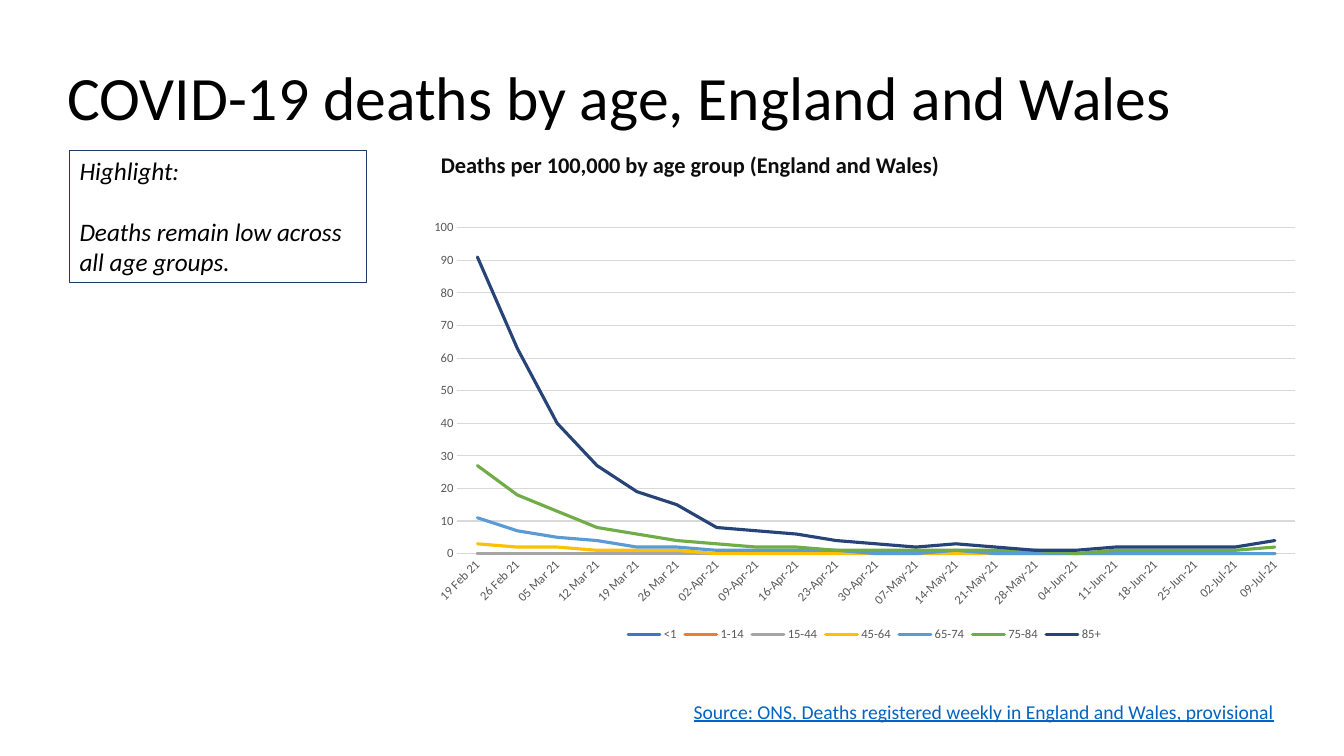
"""Builds a slide on COVID-19 deaths by age group in England and Wales."""
from pptx import Presentation
from pptx.chart.data import CategoryChartData
from pptx.dml.color import RGBColor
from pptx.enum import chart as ch, shapes, text
from pptx.util import Inches, Pt

FONT = "Calibri"
BLACK = RGBColor(0x00, 0x00, 0x00)
NEAR_BLACK = RGBColor(0x0D, 0x0D, 0x0D)
GREY = RGBColor(0x59, 0x59, 0x59)
RULE = RGBColor(0xD9, 0xD9, 0xD9)
NAVY = RGBColor(0x20, 0x38, 0x64)
LINK_BLUE = RGBColor(0x05, 0x63, 0xC1)

WEEKS = [
    "19 Feb 21", "26 Feb 21", "05 Mar 21", "12 Mar 21", "19 Mar 21", "26 Mar 21",
    "02-Apr-21", "09-Apr-21", "16-Apr-21", "23-Apr-21", "30-Apr-21",
    "07-May-21", "14-May-21", "21-May-21", "28-May-21",
    "04-Jun-21", "11-Jun-21", "18-Jun-21", "25-Jun-21", "02-Jul-21", "09-Jul-21",
]
NO_DEATHS = [0] * len(WEEKS)
AGE_GROUPS = [
    ("<1", RGBColor(0x44, 0x72, 0xC4), NO_DEATHS),
    ("1-14", RGBColor(0xED, 0x7D, 0x31), NO_DEATHS),
    ("15-44", RGBColor(0xA5, 0xA5, 0xA5), NO_DEATHS),
    ("45-64", RGBColor(0xFF, 0xC0, 0x00), [3, 2, 2, 1, 1, 1] + [0] * 15),
    ("65-74", RGBColor(0x5B, 0x9B, 0xD5),
     [11, 7, 5, 4, 2, 2, 1, 1, 1, 1, 0, 0, 1] + [0] * 8),
    ("75-84", RGBColor(0x70, 0xAD, 0x47),
     [27, 18, 13, 8, 6, 4, 3, 2, 2, 1, 1, 1, 1, 1, 1, 0, 1, 1, 1, 1, 2]),
    ("85+", RGBColor(0x26, 0x44, 0x78),
     [91, 63, 40, 27, 19, 15, 8, 7, 6, 4, 3, 2, 3, 2, 1, 1, 2, 2, 2, 2, 4]),
]


def set_font(font, size, color):
    """Give a font its face, size and colour."""
    font.name, font.size = FONT, Pt(size)
    font.color.rgb = color


def add_label(s, box, words, size, color, wrap=False):
    """Place a one-paragraph text box and return its paragraph."""
    tf = s.shapes.add_textbox(*map(Inches, box)).text_frame
    tf.word_wrap = wrap
    p = tf.paragraphs[0]
    p.text = words
    set_font(p.font, size, color)
    return p


def add_title(s, box):
    """Place the slide title, centred vertically in its box."""
    p = add_label(s, box, "COVID-19 deaths by age, England and Wales", 44, BLACK, True)
    p.line_spacing = 0.9
    s.shapes[-1].text_frame.vertical_anchor = text.MSO_ANCHOR.MIDDLE


def add_highlight(s, box):
    """Place the outlined highlight note."""
    sp = s.shapes.add_shape(shapes.MSO_SHAPE.RECTANGLE, *map(Inches, box))
    sp.shadow.inherit = False
    sp.fill.background()
    sp.line.color.rgb, sp.line.width = NAVY, Pt(0.75)
    tf = sp.text_frame
    tf.word_wrap = True
    tf.vertical_anchor = text.MSO_ANCHOR.TOP
    tf.text = "Highlight:\nDeaths remain low across all age groups."
    for p in tf.paragraphs:
        p.alignment = text.PP_ALIGN.LEFT
        set_font(p.font, 18, BLACK)
        p.font.italic = True
    tf.paragraphs[1].space_before = Pt(22)


def style_axes(chart):
    """Format both axes and the horizontal gridlines."""
    weeks, rate = chart.category_axis, chart.value_axis
    for axis in (weeks, rate):
        axis.major_tick_mark = axis.minor_tick_mark = ch.XL_TICK_MARK.NONE
        set_font(axis.tick_labels.font, 9, GREY)
    weeks.has_major_gridlines = False
    weeks.tick_labels.font._element.getparent().getparent().getparent().bodyPr.set("rot", "-2700000")
    rate.minimum_scale, rate.maximum_scale, rate.major_unit = 0, 100, 10
    rate.tick_labels.number_format = "0"
    rate.tick_labels.number_format_is_linked = False
    rate.format.line.fill.background()
    for line in (weeks.format.line, rate.major_gridlines.format.line):
        line.color.rgb, line.width = RULE, Pt(0.75)


def add_deaths_chart(s, box):
    """Place the weekly line chart of deaths by age group."""
    data = CategoryChartData()
    data.categories = WEEKS
    for name, _, rates in AGE_GROUPS:
        data.add_series(name, rates)
    chart = s.shapes.add_chart(ch.XL_CHART_TYPE.LINE, *map(Inches, box), data).chart
    set_font(chart.font, 10, BLACK)
    chart.has_title = False
    chart.has_legend = True
    chart.legend.position = ch.XL_LEGEND_POSITION.BOTTOM
    chart.legend.include_in_layout = False
    set_font(chart.legend.font, 9, GREY)
    chart.plots[0].vary_by_categories = False
    for series, (_, color, _) in zip(chart.plots[0].series, AGE_GROUPS):
        series.smooth = False
        line = series.format.line
        line.color.rgb, line.width = color, Pt(2.25)
        line._get_or_add_ln().set("cap", "rnd")
    style_axes(chart)


def main():
    """Build and save the slide."""
    prs = Presentation()
    prs.slide_width, prs.slide_height = Inches(13.33), Inches(7.5)
    s = prs.slides.add_slide(prs.slide_layouts[6])
    add_title(s, (0.57, 0.27, 11.5, 1.45))
    add_highlight(s, (0.69, 1.49, 2.95, 1.31))
    source = "Source: ONS, Deaths registered weekly in England and Wales, provisional"
    add_label(s, (6.78, 6.89, 6.02, 0.34), source, 14, LINK_BLUE).font.underline = True
    heading = add_label(s, (4.24, 1.45, 5.26, 0.37),
                        "Deaths per 100,000 by age group (England and Wales) ", 16, NEAR_BLACK)
    heading.font.bold = True
    heading.alignment = text.PP_ALIGN.CENTER
    add_deaths_chart(s, (4.13, 2.1, 8.89, 4.31))
    prs.save("out.pptx")


if __name__ == "__main__":
    main()
